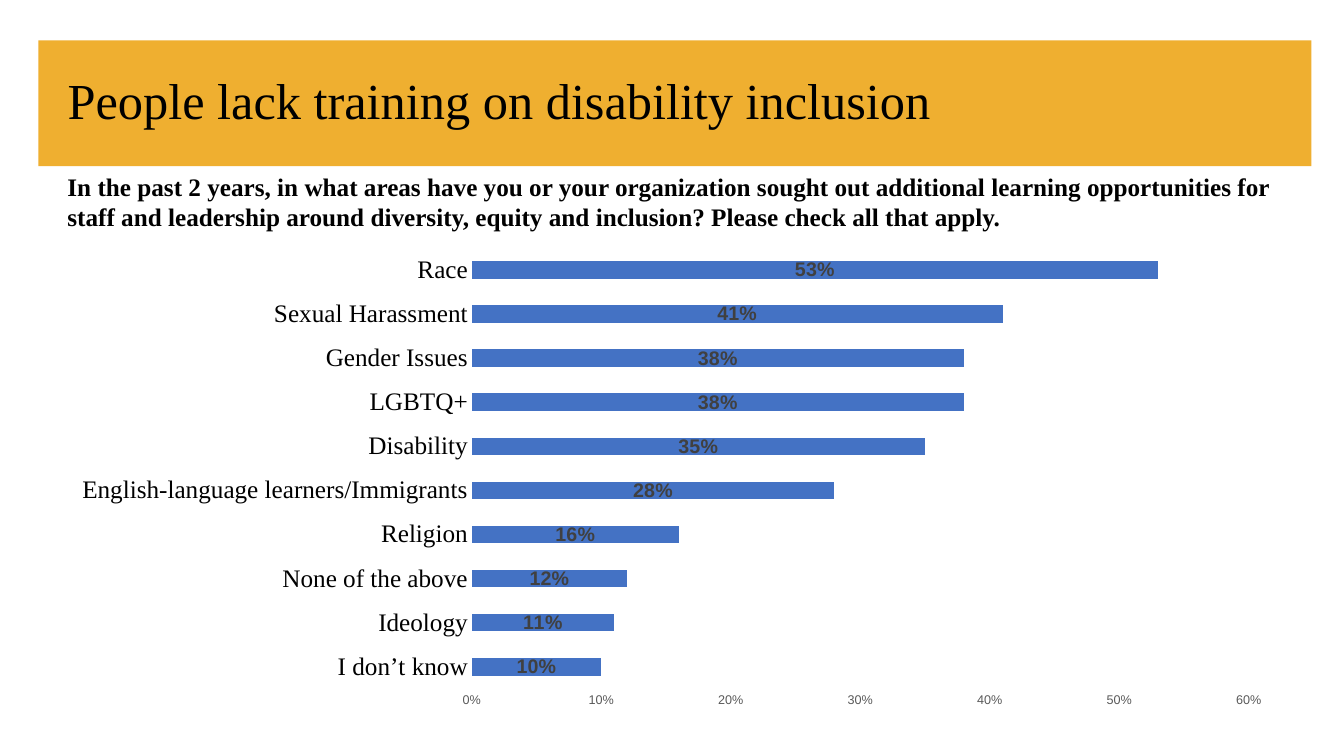
from lxml import etree
from pptx import Presentation
from pptx import util as u
from pptx.chart.data import CategoryChartData
from pptx.dml.color import RGBColor
from pptx.enum import chart as ch, shapes, text
from pptx.oxml.ns import qn

# Content
TITLE = "People lack training on disability inclusion"
ASK = ("In the past 2 years, in what areas have you or your organization "
       "sought out additional learning opportunities for staff and leadership "
       "around diversity, equity and inclusion? Please check all that apply.")
AREAS = [
    ("Race", 0.53),
    ("Sexual Harassment", 0.41),
    ("Gender Issues", 0.38),
    ("LGBTQ+", 0.38),
    ("Disability", 0.35),
    ("English-language learners/Immigrants", 0.28),
    ("Religion", 0.16),
    ("None of the above", 0.12),
    ("Ideology", 0.11),
    ("I don’t know", 0.1),
]

# Colours and fonts
GOLD = RGBColor(0xEF, 0xAF, 0x30)
BLUE = RGBColor(0x44, 0x72, 0xC4)
BLACK = RGBColor(0, 0, 0)
DARK = RGBColor(0x40, 0x40, 0x40)
GREY = RGBColor(0x59, 0x59, 0x59)
SERIF, SANS = "Times New Roman", "Arial"

# Boxes in cm: left, top, width, height
BAND = (0.97, 1.02, 32.08, 3.17)
HEAD = (1.45, 1.02, 29.21, 3.17)
QUERY = (1.45, 4.19, 31.47, 2.57)
CHART = (1.45, 6.02, 30.96, 12.07)
PLOT = (11.89, 6.25, 19.58, 11.11)


def place(box):
    return [u.Cm(n) for n in box]


def style(font, name, size, color, bold=False):
    font.name, font.size, font.bold = name, u.Pt(size), bold
    font.color.rgb = color


def write(frame, words, size, bold=False):
    frame.word_wrap = True
    run = frame.paragraphs[0].add_run()
    run.text = words
    style(run.font, SERIF, size, BLACK, bold)


def fix_plot(chart):
    """Pin the inner plot area, as shares of the chart box."""
    area = chart._chartSpace.chart.plotArea
    for old in area.findall(qn("c:layout")):
        area.remove(old)
    lay = etree.Element(qn("c:layout"))
    man = etree.SubElement(lay, qn("c:manualLayout"))
    left, top, wide, high = CHART
    marks = {
        "layoutTarget": "inner", "xMode": "edge", "yMode": "edge",
        "x": (PLOT[0] - left) / wide, "y": (PLOT[1] - top) / high,
        "w": PLOT[2] / wide, "h": PLOT[3] / high,
    }
    for tag, val in marks.items():
        etree.SubElement(man, qn("c:" + tag)).set("val", str(val))
    area.insert(0, lay)


def add_bars(slide):
    data = CategoryChartData(number_format="0%")
    rows = AREAS[::-1]
    data.categories = [name for name, _ in rows]
    data.add_series("Series 1", [share for _, share in rows])
    chart = slide.shapes.add_chart(
        ch.XL_CHART_TYPE.BAR_STACKED, *place(CHART), data).chart
    chart.has_legend = chart.has_title = False
    style(chart.font, SANS, 10, BLACK)

    # Bars and their labels
    plot = chart.plots[0]
    plot.gap_width, plot.overlap = 150, 100
    plot.vary_by_categories = False
    bars = plot.series[0]
    bars.format.fill.solid()
    bars.format.fill.fore_color.rgb = BLUE
    tags = bars.data_labels
    tags.show_value = True
    tags.number_format, tags.number_format_is_linked = "0%", False
    tags.position = ch.XL_LABEL_POSITION.CENTER
    style(tags.font, SANS, 14, DARK, True)

    # Axes
    for axis, face, size, color in (
            (chart.category_axis, SERIF, 18, BLACK),
            (chart.value_axis, SANS, 9, GREY)):
        axis.has_major_gridlines = False
        axis.major_tick_mark = axis.minor_tick_mark = ch.XL_TICK_MARK.NONE
        axis.format.line.fill.background()
        style(axis.tick_labels.font, face, size, color)
    scale = chart.value_axis
    scale.minimum_scale, scale.maximum_scale, scale.major_unit = 0, 0.6, 0.1
    scale.tick_labels.number_format = "0%"
    scale.tick_labels.number_format_is_linked = False
    fix_plot(chart)


def main():
    deck = Presentation()
    deck.slide_width, deck.slide_height = u.Cm(33.87), u.Cm(19.05)
    slide = deck.slides.add_slide(deck.slide_layouts[5])

    # Gold band, behind the title
    band = slide.shapes.add_shape(
        shapes.MSO_SHAPE.RECTANGLE, *place(BAND))
    band.shadow.inherit = False
    band.fill.solid()
    band.fill.fore_color.rgb = GOLD
    band.line.fill.background()

    # Title
    head = slide.shapes.title
    slide.shapes._spTree.append(head._element)
    head.left, head.top, head.width, head.height = place(HEAD)
    head.text_frame.vertical_anchor = text.MSO_ANCHOR.MIDDLE
    head.text_frame.auto_size = text.MSO_AUTO_SIZE.NONE
    write(head.text_frame, TITLE, 36)
    para = head.text_frame.paragraphs[0]
    para.alignment, para.line_spacing = text.PP_ALIGN.LEFT, 0.9

    # Chart, then the survey question above it
    add_bars(slide)
    query = slide.shapes.add_textbox(*place(QUERY))
    write(query.text_frame, ASK, 18, True)

    deck.save("out.pptx")


if __name__ == "__main__":
    main()
